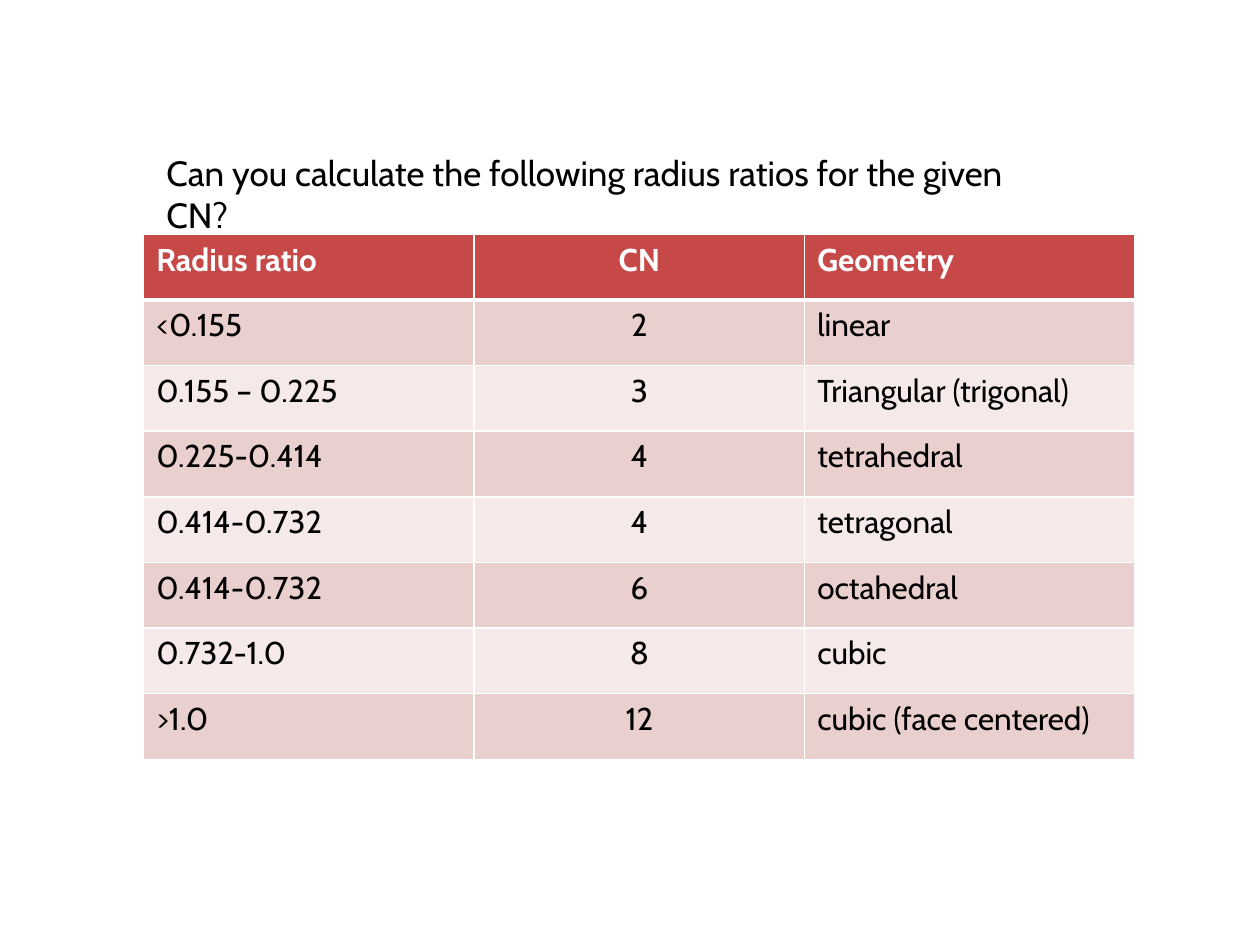
from dataclasses import dataclass

from lxml.etree import SubElement
from pptx import Presentation
from pptx.dml.color import RGBColor
from pptx.enum.text import MSO_ANCHOR, MSO_AUTO_SIZE, PP_ALIGN
from pptx.oxml.ns import qn
from pptx.util import Inches, Pt


@dataclass(frozen=True)
class Theme:
    font: str = "Cabin"
    title_size: int = 20
    cell_size: int = 18
    text: str = "000000"
    white: str = "FFFFFF"
    header: str = "C64847"
    bands: tuple[str, str] = ("EACFCF", "F5E9E9")
    rule: int = 1
    header_rule: int = 3


@dataclass(frozen=True)
class RatioRow:
    ratio: str
    cn: str
    geometry: str


THEME = Theme()
HEADER = RatioRow("Radius ratio", "CN", "Geometry")
ROWS = [
    RatioRow("<0.155", "2", "linear"),
    RatioRow("0.155 – 0.225", "3", "Triangular (trigonal)"),
    RatioRow("0.225-0.414", "4", "tetrahedral"),
    RatioRow("0.414-0.732", "4", "tetragonal"),
    RatioRow("0.414-0.732", "6", "octahedral"),
    RatioRow("0.732-1.0", "8", "cubic"),
    RatioRow(">1.0", "12", "cubic (face centered)"),
]


def write(tf, text: str, *, size: int, color: str = THEME.text,
          bold: bool = False, align=PP_ALIGN.LEFT) -> None:
    p = tf.paragraphs[0]
    p.alignment = align
    r = p.add_run()
    r.text = text
    r.font.name = THEME.font
    r.font.size = Pt(size)
    r.font.bold = bold
    r.font.color.rgb = RGBColor.from_string(color)


def add_borders(cell, *, top: int, bottom: int) -> None:
    tc_pr = cell._tc.get_or_add_tcPr()
    widths = {"lnL": THEME.rule, "lnR": THEME.rule, "lnT": top, "lnB": bottom}
    for side, width in widths.items():
        ln = SubElement(tc_pr, qn(f"a:{side}"), w=str(Pt(width)))
        fill = SubElement(ln, qn("a:solidFill"))
        SubElement(fill, qn("a:srgbClr"), val=THEME.white)


def add_title(s, text: str) -> None:
    sp = s.shapes.title
    sp.left, sp.top = Inches(1.22), Inches(1.15)
    sp.width, sp.height = Inches(7.32), Inches(0.44)
    tf = sp.text_frame
    tf.word_wrap = True
    tf.auto_size = MSO_AUTO_SIZE.NONE
    tf.vertical_anchor = MSO_ANCHOR.TOP
    write(tf, text, size=THEME.title_size)
    tf.paragraphs[0].line_spacing = 1.0
    tf.paragraphs[0].space_before = Pt(0)


def add_ratio_table(s, header: RatioRow, rows: list[RatioRow]) -> None:
    records = [header, *rows]
    table = s.shapes.add_table(len(records), 3, Inches(1.14), Inches(1.86),
                               Inches(7.87), Inches(4.17)).table
    for i, record in enumerate(records):
        is_header = i == 0
        fill = THEME.header if is_header else THEME.bands[(i - 1) % 2]
        for j, text in enumerate((record.ratio, record.cn, record.geometry)):
            cell = table.cell(i, j)
            add_borders(cell,
                        top=THEME.header_rule if i == 1 else THEME.rule,
                        bottom=THEME.header_rule if is_header else THEME.rule)
            cell.fill.solid()
            cell.fill.fore_color.rgb = RGBColor.from_string(fill)
            write(cell.text_frame, text, size=THEME.cell_size, bold=is_header,
                  color=THEME.white if is_header else THEME.text,
                  align=PP_ALIGN.CENTER if j == 1 else PP_ALIGN.LEFT)


def main() -> None:
    prs = Presentation()
    prs.slide_width, prs.slide_height = Inches(10), Inches(7.5)
    s = prs.slides.add_slide(prs.slide_layouts[5])
    add_title(s, "Can you calculate the following radius ratios for the given CN?")
    add_ratio_table(s, HEADER, ROWS)
    prs.save("out.pptx")


if __name__ == "__main__":
    main()
